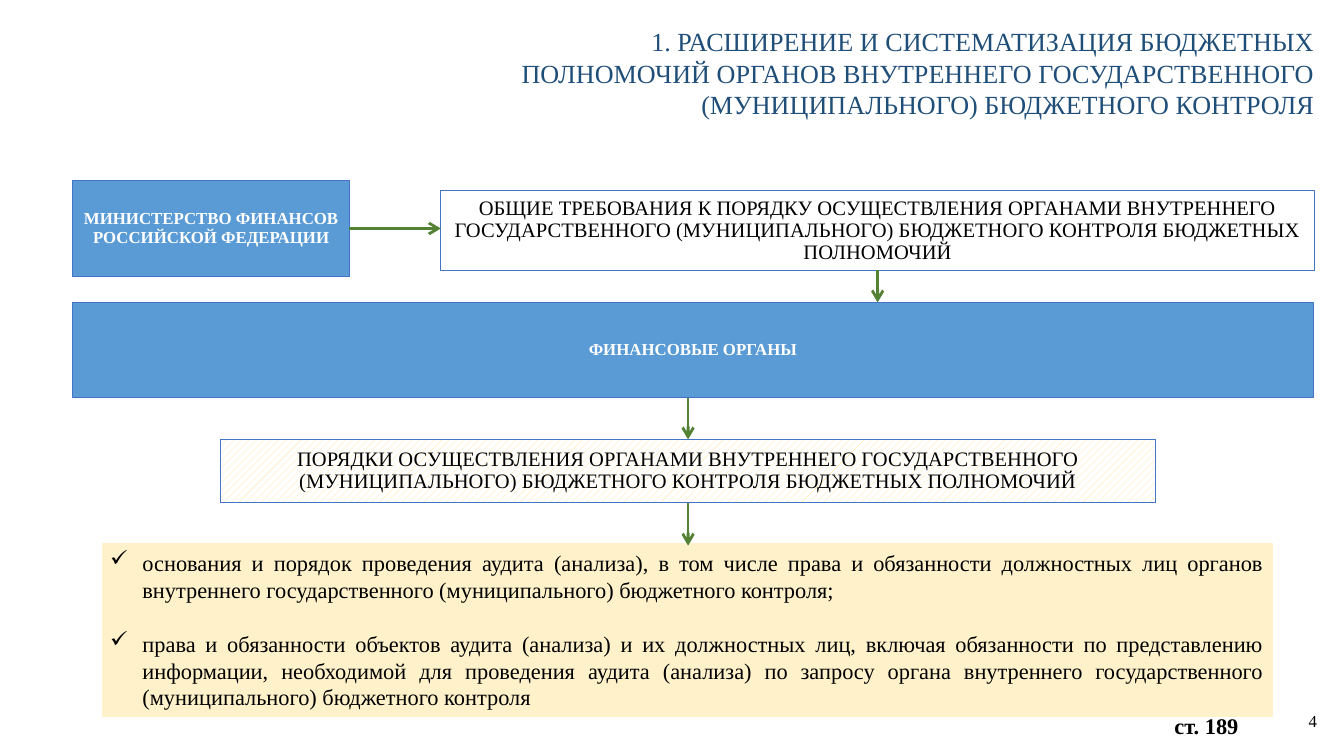
from lxml.etree import SubElement
from pptx import Presentation
from pptx.dml.color import RGBColor
from pptx.enum.dml import MSO_PATTERN
from pptx.enum.shapes import MSO_CONNECTOR, MSO_SHAPE
from pptx.enum.text import MSO_ANCHOR, MSO_AUTO_SIZE, PP_ALIGN
from pptx.oxml.ns import qn
from pptx.util import Inches, Pt

FONT = "Times New Roman"
BLACK, WHITE, NAVY = "000000", "FFFFFF", "1F4E79"
BLUE, EDGE, GREEN, SAND = "5B9BD5", "4472C4", "548235", "FFE699"
BOTTOM, RIGHT, TOP = 2, 3, 0
AXIS = 5.12

TITLE = ("1. РАСШИРЕНИЕ И СИСТЕМАТИЗАЦИЯ БЮДЖЕТНЫХ ПОЛНОМОЧИЙ ОРГАНОВ "
         "ВНУТРЕННЕГО ГОСУДАРСТВЕННОГО (МУНИЦИПАЛЬНОГО) БЮДЖЕТНОГО КОНТРОЛЯ")
SCOPE = ("ОСУЩЕСТВЛЕНИЯ ОРГАНАМИ ВНУТРЕННЕГО ГОСУДАРСТВЕННОГО "
         "(МУНИЦИПАЛЬНОГО) БЮДЖЕТНОГО КОНТРОЛЯ БЮДЖЕТНЫХ ПОЛНОМОЧИЙ")
ITEMS = [
    "основания и порядок проведения аудита (анализа), в том числе права и "
    "обязанности должностных лиц органов внутреннего государственного "
    "(муниципального) бюджетного контроля;",
    "права и обязанности объектов аудита (анализа) и их должностных лиц, "
    "включая обязанности по представлению информации, необходимой для "
    "проведения аудита (анализа) по запросу органа внутреннего "
    "государственного (муниципального) бюджетного контроля",
]


def rgb(code):
    return RGBColor.from_string(code)


def style(para, size, color, bold=False, align=PP_ALIGN.LEFT):
    para.alignment = align
    for run in para.runs:
        font = run.font
        font.name, font.size, font.bold = FONT, Pt(size), bold
        font.color.rgb = rgb(color)


def inset(frame, side, top):
    frame.word_wrap = True
    frame.margin_left = frame.margin_right = Inches(side)
    frame.margin_top = frame.margin_bottom = Inches(top)


def add_label(slide, area, text, size, color=BLACK, bold=False,
              align=PP_ALIGN.RIGHT, pad=(0.07, 0.04)):
    frame = slide.shapes.add_textbox(*map(Inches, area)).text_frame
    inset(frame, *pad)
    frame.text = text
    style(frame.paragraphs[0], size, color, bold, align)
    return frame


def add_rect(slide, area, edge, width):
    rect = slide.shapes.add_shape(MSO_SHAPE.RECTANGLE, *map(Inches, area))
    rect.shadow.inherit = False
    rect.line.color.rgb = rgb(edge)
    rect.line.width = Pt(width)
    rect.text_frame.vertical_anchor = MSO_ANCHOR.MIDDLE
    return rect


def add_box(slide, area, text, size=11, color=BLACK, bold=False):
    """Add an unfilled, outlined box with centred text."""
    box = add_rect(slide, area, EDGE, 0.5)
    box.fill.background()
    frame = box.text_frame
    inset(frame, 0.01, 0.01)
    frame.text = text
    para = frame.paragraphs[0]
    para.line_spacing = 0.9
    style(para, size, color, bold, PP_ALIGN.CENTER)
    return box


def add_body(slide, area, text):
    """Add a blue box that names an authority."""
    box = add_box(slide, area, text, 9, WHITE, True)
    box.fill.solid()
    box.fill.fore_color.rgb = rgb(BLUE)
    return box


def add_list(slide, area, items):
    rect = add_rect(slide, area, WHITE, 1)
    rect.fill.solid()
    rect.fill.fore_color.rgb = rgb(SAND)
    tint = rect.fill._xPr.find(".//" + qn("a:srgbClr"))
    SubElement(tint, qn("a:alpha"), val="50000")
    frame = rect.text_frame
    inset(frame, 0.07, 0.04)
    frame.text = "\n".join(items)
    for i, para in enumerate(frame.paragraphs):
        props = para._p.get_or_add_pPr()
        props.set("marL", str(Inches(0.24)))
        props.set("indent", str(-Inches(0.24)))
        SubElement(props, qn("a:buChar"), char="✓")
        if i:
            para.space_before = Pt(14.5)
        style(para, 12, BLACK, align=PP_ALIGN.JUSTIFY)


def add_arrow(slide, start, end, source=None, target=None):
    """Draw an arrow; source and target are (shape, side) pairs to join."""
    line = slide.shapes.add_connector(
        MSO_CONNECTOR.STRAIGHT, *map(Inches, start + end))
    if source:
        line.begin_connect(*source)
    if target:
        line.end_connect(*target)
    line.line.color.rgb = rgb(GREEN)
    line.line.width = Pt(1.5)
    SubElement(line.line._get_or_add_ln(), qn("a:tailEnd"), type="arrow")
    SubElement(line._element.spPr, qn("a:effectLst"))


def main():
    deck = Presentation()
    deck.slide_width = Inches(10)
    deck.slide_height = deck.slide_width * 9 // 16
    slide = deck.slides.add_slide(deck.slide_layouts[6])

    title = add_label(slide, (3.44, 0.15, 6.41, 0.78), TITLE, 14, NAVY)
    title.auto_size = MSO_AUTO_SIZE.SHAPE_TO_FIT_TEXT
    number = add_label(slide, (9.54, 5.21, 0.33, 0.3), "4", 9)
    number.vertical_anchor = MSO_ANCHOR.MIDDLE

    ministry = add_body(slide, (0.54, 1.34, 2.06, 0.72),
                        "МИНИСТЕРСТВО ФИНАНСОВ РОССИЙСКОЙ ФЕДЕРАЦИИ")
    rules = add_box(slide, (3.28, 1.42, 6.5, 0.59),
                    "ОБЩИЕ ТРЕБОВАНИЯ К ПОРЯДКУ " + SCOPE)
    add_body(slide, (0.54, 2.25, 9.23, 0.71), "ФИНАНСОВЫЕ ОРГАНЫ")
    orders = add_box(slide, (1.64, 3.27, 6.96, 0.47), "ПОРЯДКИ " + SCOPE)
    orders.fill.patterned()
    orders.fill.pattern = MSO_PATTERN.WIDE_UPWARD_DIAGONAL
    orders.fill.fore_color.rgb = rgb(SAND)
    orders.fill.back_color.rgb = rgb(WHITE)
    add_list(slide, (0.75, 4.03, 8.73, 1.31), ITEMS)

    add_arrow(slide, (2.6, 1.7), (3.28, 1.7), source=(ministry, RIGHT))
    add_arrow(slide, (6.53, 2.01), (6.53, 2.25), source=(rules, BOTTOM))
    add_arrow(slide, (AXIS, 2.96), (AXIS, 3.27), target=(orders, TOP))
    add_arrow(slide, (AXIS, 3.74), (AXIS, 4.06), source=(orders, BOTTOM))

    add_label(slide, (8.64, 5.25, 0.74, 0.3), "ст. 189", 12, bold=True,
              align=PP_ALIGN.LEFT, pad=(0.1, 0.05))
    deck.save("out.pptx")


if __name__ == "__main__":
    main()
